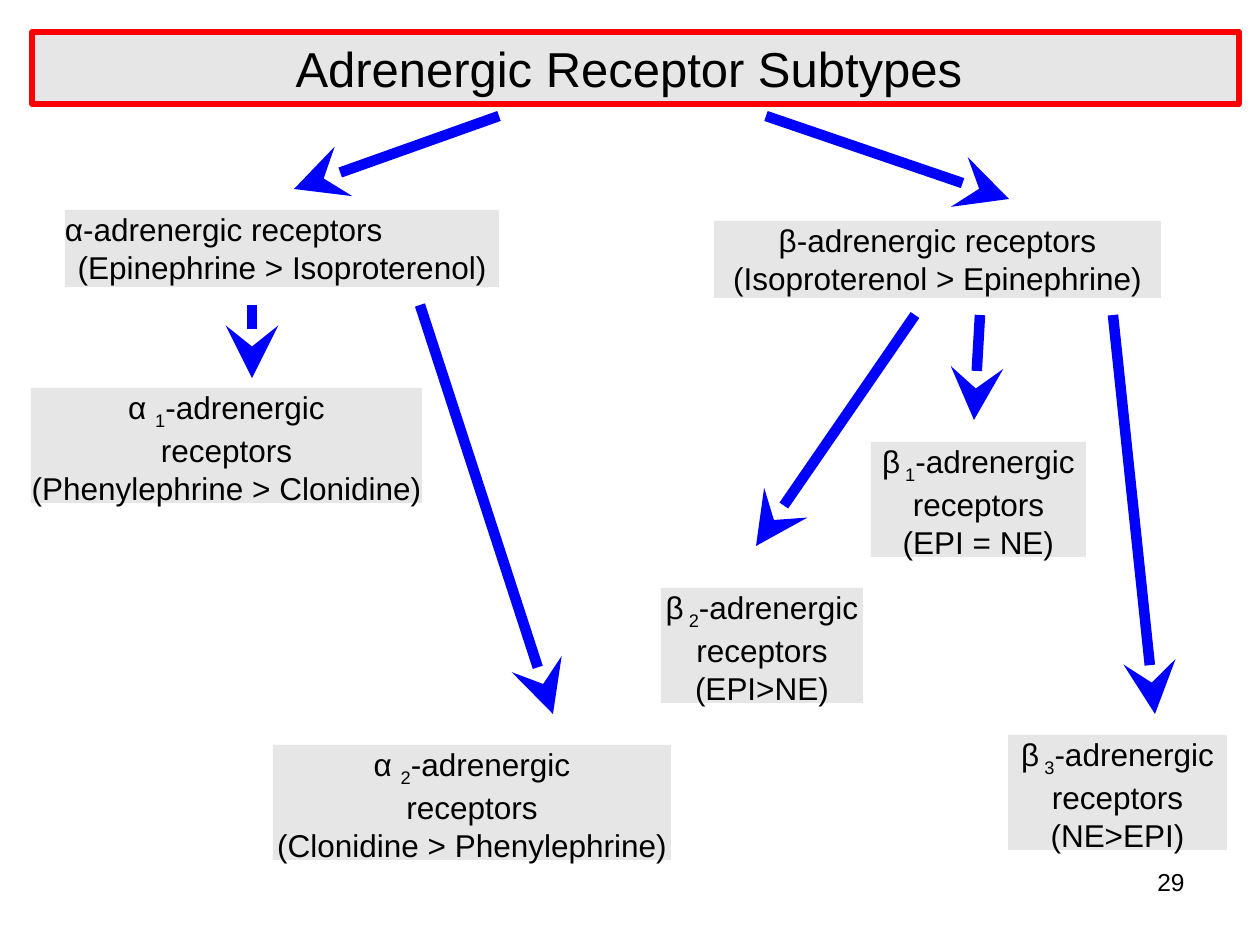
"""Build a slide charting the adrenergic receptor subtypes as a tree."""
from lxml import etree
from pptx import Presentation
from pptx.dml.color import RGBColor
from pptx.enum.shapes import MSO_CONNECTOR, MSO_SHAPE
from pptx.enum.text import MSO_ANCHOR, PP_ALIGN
from pptx.oxml.ns import qn
from pptx.util import Emu, Inches, Pt

PX = Inches(1) / 126
STRAIGHT, RECTANGLE = MSO_CONNECTOR.STRAIGHT, MSO_SHAPE.RECTANGLE
LEFT, CENTER, RIGHT = PP_ALIGN.LEFT, PP_ALIGN.CENTER, PP_ALIGN.RIGHT
TOP, MIDDLE = MSO_ANCHOR.TOP, MSO_ANCHOR.MIDDLE
BLACK = RGBColor(0x00, 0x00, 0x00)
GREY = RGBColor(0xE6, 0xE6, 0xE6)
RED = RGBColor(0xFF, 0x00, 0x00)
BLUE = RGBColor(0x00, 0x00, 0xFF)

TITLE = "Adrenergic Receptor Subtypes "
TITLE_BOX = (32, 32, 1207, 72)
PAGE_NUMBER = "29"
PAGE_NUMBER_BOX = (903, 861, 294, 66)

FAMILY_HEIGHT, SUBTYPE_HEIGHT = 77, 115
FAMILIES = [
    ("α-adrenergic receptors", "(Epinephrine > Isoproterenol)", LEFT, (65, 210, 434)),
    ("β-adrenergic receptors", "(Isoproterenol > Epinephrine)", CENTER, (714, 221, 447)),
]
SUBTYPES = [
    ("α ", "1", "(Phenylephrine > Clonidine)", (31, 388, 391)),
    ("α ", "2", "(Clonidine > Phenylephrine)", (273, 745, 398)),
    ("β", " 1", "(EPI = NE)", (871, 442, 215)),
    ("β", " 2", "(EPI>NE)", (661, 588, 202)),
    ("β", " 3", "(NE>EPI)", (1008, 735, 219)),
]
ARROWS = [
    (499, 116, 294, 189),
    (766, 116, 1009, 199),
    (252, 305, 252, 378),
    (420, 305, 553, 714),
    (915, 315, 756, 546),
    (980, 315, 974, 420),
    (1113, 315, 1155, 714),
]


def px(*lengths):
    return [Emu(round(length * PX)) for length in lengths]


def style(paragraph, size, alignment=CENTER):
    paragraph.alignment = alignment
    paragraph.font.name = "Arial"
    paragraph.font.size = Pt(size)
    paragraph.font.color.rgb = BLACK


def add_arrow(slide, ends):
    arrow = slide.shapes.add_connector(STRAIGHT, *px(*ends))
    arrow.line.color.rgb = BLUE
    arrow.line.width = Pt(6)
    etree.SubElement(arrow.line._get_or_add_ln(), qn("a:tailEnd"),
                     type="stealth", w="lg", len="lg")
    etree.SubElement(arrow._element.spPr, qn("a:effectLst"))


def add_receptor(slide, place, height, lines, first_alignment=CENTER):
    box = slide.shapes.add_shape(RECTANGLE, *px(*place, height))
    box.shadow.inherit = False
    box.fill.solid()
    box.fill.fore_color.rgb = GREY
    box.line.fill.background()
    frame = box.text_frame
    frame.word_wrap = True
    frame.vertical_anchor = TOP
    frame.margin_left = frame.margin_top = frame.margin_right = frame.margin_bottom = 0
    for index, parts in enumerate(lines):
        paragraph = frame.add_paragraph() if index else frame.paragraphs[0]
        style(paragraph, 18, CENTER if index else first_alignment)
        for position, part in enumerate(parts):
            run = paragraph.add_run()
            run.text = part
            if position == 1:
                run.font._element.set("baseline", "-25000")


def add_title(slide):
    title = slide.shapes.title
    title.left, title.top, title.width, title.height = px(*TITLE_BOX)
    title.fill.solid()
    title.fill.fore_color.rgb = GREY
    title.line.color.rgb = RED
    title.line.width = Pt(3)
    title.text_frame.text = TITLE
    title.text_frame.vertical_anchor = MIDDLE
    style(title.text_frame.paragraphs[0], 28)


def add_page_number(slide):
    frame = slide.shapes.add_textbox(*px(*PAGE_NUMBER_BOX)).text_frame
    frame.word_wrap = True
    frame.text = PAGE_NUMBER
    style(frame.paragraphs[0], 14, RIGHT)


def main():
    deck = Presentation()
    deck.slide_width, deck.slide_height = px(1260, 945)
    slide = deck.slides.add_slide(deck.slide_layouts[5])
    add_title(slide)
    for ends in ARROWS:
        add_arrow(slide, ends)
    for name, potency, alignment, place in FAMILIES:
        add_receptor(slide, place, FAMILY_HEIGHT, [(name,), (potency,)], alignment)
    for letter, number, potency, place in SUBTYPES:
        lines = [(letter, number, "-adrenergic"), ("receptors",), (potency,)]
        add_receptor(slide, place, SUBTYPE_HEIGHT, lines)
    add_page_number(slide)
    deck.save("out.pptx")


if __name__ == "__main__":
    main()
